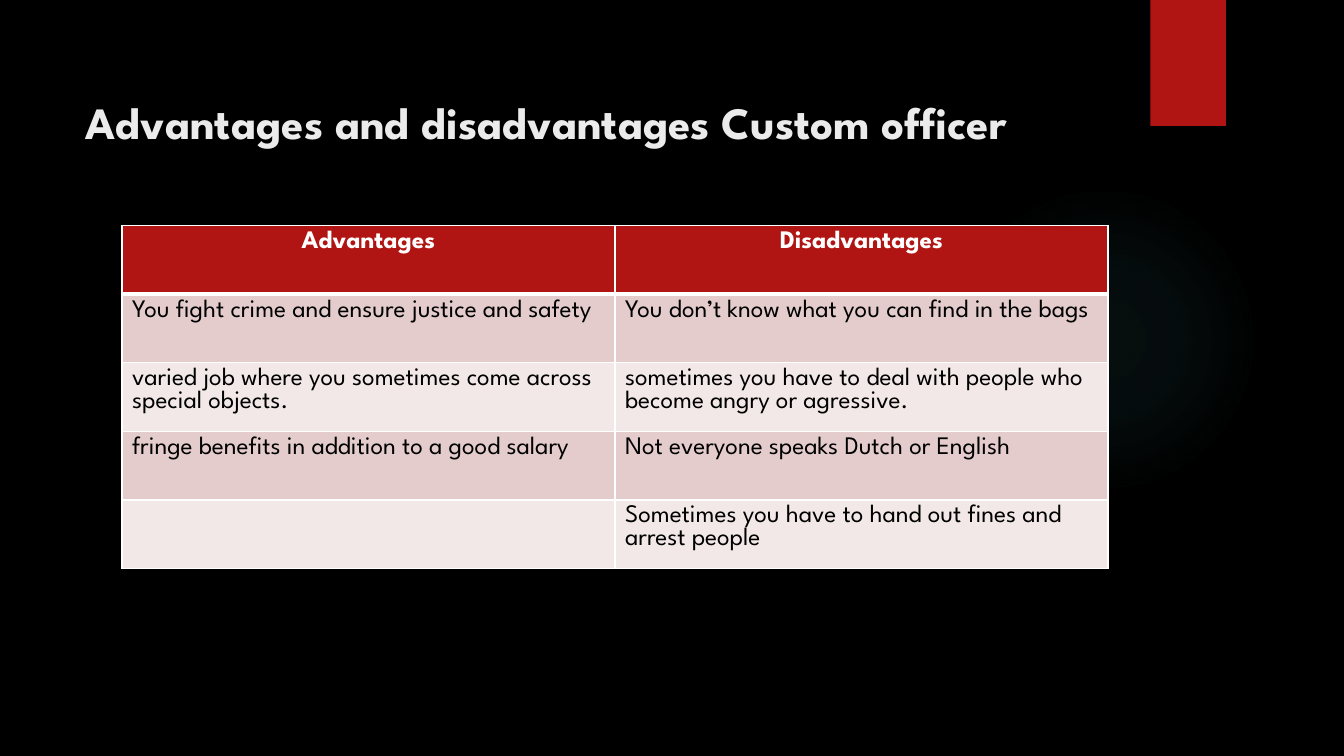
from lxml.etree import SubElement
from pptx import Presentation
from pptx.dml.color import RGBColor
from pptx.enum.shapes import MSO_SHAPE
from pptx.enum.text import MSO_ANCHOR, MSO_AUTO_SIZE, PP_ALIGN
from pptx.oxml import parse_xml
from pptx.oxml.ns import nsdecls, qn
from pptx.util import Inches, Pt

COLORS = {
    "background": "000000",
    "glow": "50B9C1",
    "accent": "B01513",
    "title": "EBEBEB",
    "white": "FFFFFF",
    "text": "000000",
    "odd_row": "E4CCCC",
    "even_row": "F2E8E7",
}
FONT = "League Spartan"
GLOW_STOPS = [(0, 7), (36, 6), (69, 0)]
HEADINGS = ("Advantages", "Disadvantages")
POINTS = [
    ("You fight crime and ensure justice and safety",
     "You don’t know what you can find in the bags"),
    ("varied job where you sometimes come across special objects.",
     "sometimes you have to deal with people who become angry or agressive."),
    ("fringe benefits in addition to a good salary",
     "Not everyone speaks Dutch or English"),
    ("", "Sometimes you have to hand out fines and arrest people"),
]


def color(name):
    """Return the named palette colour."""
    return RGBColor.from_string(COLORS[name])


def write(frame, text, size=18, ink="text", bold=False, align=PP_ALIGN.LEFT):
    """Put one formatted paragraph into a text frame."""
    frame.word_wrap = True
    paragraph = frame.paragraphs[0]
    paragraph.alignment = align
    paragraph.font.size = Pt(size)
    if text:
        run = paragraph.add_run()
        run.text = text
        run.font.name = FONT
        run.font.size = Pt(size)
        run.font.bold = bold
        run.font.color.rgb = color(ink)


def add_plain_shape(slide, kind, box):
    """Add a preset shape without line or shadow."""
    shape = slide.shapes.add_shape(kind, *map(Inches, box))
    shape.shadow.inherit = False
    shape.line.fill.background()
    return shape


def add_backdrop(slide, glow_box, ribbon_box):
    """Draw the black background, the soft glow and the red ribbon."""
    slide.background.fill.solid()
    slide.background.fill.fore_color.rgb = color("background")

    glow = add_plain_shape(slide, MSO_SHAPE.OVAL, glow_box)
    stops = "".join(
        f'<a:gs pos="{position * 1000}"><a:srgbClr val="{COLORS["glow"]}">'
        f'<a:alpha val="{alpha * 1000}"/></a:srgbClr></a:gs>'
        for position, alpha in GLOW_STOPS)
    gradient = parse_xml(
        f'<a:gradFill {nsdecls("a")} rotWithShape="1"><a:gsLst>{stops}</a:gsLst>'
        '<a:path path="circle"><a:fillToRect l="50000" t="50000" r="50000" b="50000"/>'
        '</a:path></a:gradFill>')
    glow.fill.solid()
    properties = glow._element.spPr
    properties.replace(properties.find(qn("a:solidFill")), gradient)

    ribbon = add_plain_shape(slide, MSO_SHAPE.RECTANGLE, ribbon_box)
    ribbon.fill.solid()
    ribbon.fill.fore_color.rgb = color("accent")


def add_title(slide, box, text):
    """Place the title placeholder in its box, in front of the backdrop."""
    title = slide.shapes.title
    title.left, title.top, title.width, title.height = map(Inches, box)
    slide.shapes._spTree.append(title._element)
    frame = title.text_frame
    frame.auto_size = MSO_AUTO_SIZE.NONE
    frame.vertical_anchor = MSO_ANCHOR.TOP
    write(frame, text, size=32, ink="title", bold=True)


def set_borders(cell, **widths):
    """Draw white cell borders, with a width in points for each side."""
    properties = cell._tc.get_or_add_tcPr()
    for side, width in widths.items():
        line = SubElement(properties, qn(f"a:ln{side}"), w=str(Pt(width)))
        fill = SubElement(line, qn("a:solidFill"))
        SubElement(fill, qn("a:srgbClr"), val=COLORS["white"])


def add_comparison(slide, box, headings, points):
    """Fill the box with a table of headings over banded rows."""
    rows = [headings, *points]
    table = slide.shapes.add_table(
        len(rows), len(headings), *map(Inches, box)).table
    for row_index, row in enumerate(rows):
        is_heading = row_index == 0
        band = "accent" if is_heading else "odd_row" if row_index % 2 else "even_row"
        for column_index, text in enumerate(row):
            cell = table.cell(row_index, column_index)
            set_borders(cell, L=1, R=1, T=3 if row_index == 1 else 1,
                        B=3 if is_heading else 1)
            cell.fill.solid()
            cell.fill.fore_color.rgb = color(band)
            write(cell.text_frame, text, bold=is_heading,
                  ink="white" if is_heading else "text",
                  align=PP_ALIGN.CENTER if is_heading else PP_ALIGN.LEFT)


def main():
    """Build and save the slide."""
    deck = Presentation()
    deck.slide_width, deck.slide_height = Inches(13.33), Inches(7.5)
    slide = deck.slides.add_slide(deck.slide_layouts[5])
    add_backdrop(slide, (9.41, 1.83, 3.08, 3.08), (11.41, 0, 0.75, 1.25))
    add_title(slide, (0.75, 0.89, 10.7, 1.53),
              "Advantages and disadvantages Custom officer")
    add_comparison(slide, (1.21, 2.24, 9.78, 3.4), HEADINGS, POINTS)
    deck.save("out.pptx")


if __name__ == "__main__":
    main()
